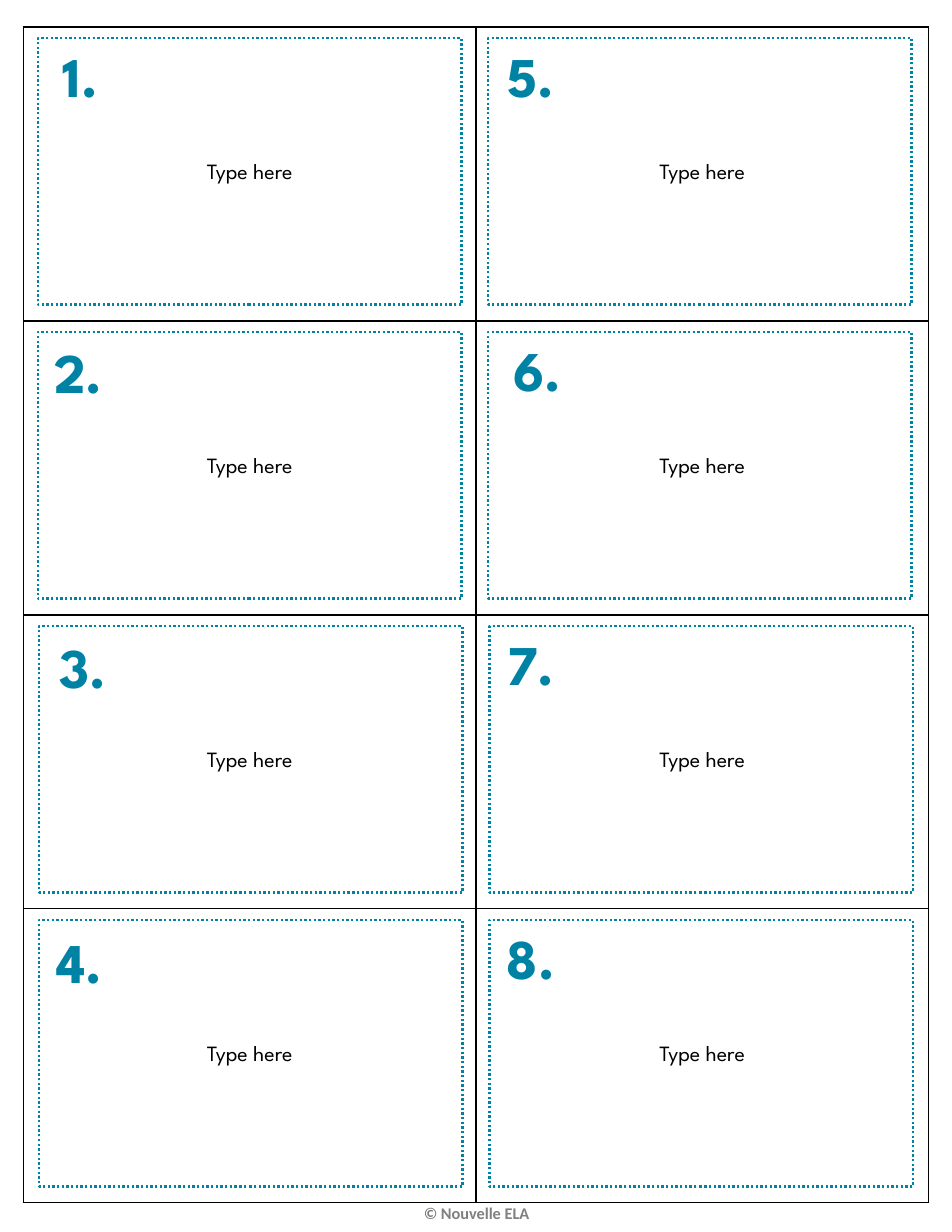
from lxml import etree
from pptx import Presentation
from pptx.dml.color import RGBColor
from pptx.enum.dml import MSO_LINE
from pptx.enum.shapes import MSO_SHAPE
from pptx.enum.text import MSO_ANCHOR, MSO_AUTO_SIZE, PP_ALIGN
from pptx.oxml.ns import qn
from pptx.util import Inches, Pt

RECT = MSO_SHAPE.RECTANGLE
DOTTED = MSO_LINE.ROUND_DOT
CENTER = PP_ALIGN.CENTER
MIDDLE = MSO_ANCHOR.MIDDLE
GROW = MSO_AUTO_SIZE.SHAPE_TO_FIT_TEXT

ROWS, COLS = 4, 2
ROW_H, COL_W = 2.625, 4.04

# Left and top of each number, down the left column and then the right
NUMBERS = [(0.11, 0.32), (0.09, 2.96), (0.13, 5.6), (0.1, 8.23),
           (4.13, 0.32), (4.19, 2.95), (4.13, 5.57), (4.13, 8.2)]


def rgb(value):
    return RGBColor.from_string(value)


def write(tf, text, font="League Spartan", size=14, color="000000", bold=False):
    p = tf.paragraphs[0]
    p.alignment = CENTER
    r = p.add_run()
    r.text = text
    r.font.name = font
    r.font.size = Pt(size)
    r.font.bold = bold
    r.font.color.rgb = rgb(color)


def add_borders(cell, color="000000", width=1):
    tc_pr = cell._tc.get_or_add_tcPr()
    for i, side in enumerate(("lnL", "lnR", "lnT", "lnB")):
        ln = etree.Element(qn(f"a:{side}"), w=str(Pt(width)))
        fill = etree.SubElement(ln, qn("a:solidFill"))
        etree.SubElement(fill, qn("a:srgbClr"), val=color)
        tc_pr.insert(i, ln)


class CardSheet:
    accent = "0082A5"

    def __init__(self, slide):
        self.s = slide

    def text(self, text, x, y, w, h, **fmt):
        tf = self.s.shapes.add_textbox(
            Inches(x), Inches(y), Inches(w), Inches(h)).text_frame
        tf.word_wrap = True
        tf.auto_size = GROW
        write(tf, text, **fmt)

    def grid(self, text, x, y):
        frame = self.s.shapes.add_table(
            ROWS, COLS, Inches(x), Inches(y),
            Inches(COLS * COL_W), Inches(ROWS * ROW_H))
        table = frame.table
        table.first_row = table.horz_banding = False
        for col in table.columns:
            col.width = Inches(COL_W)
        for row in table.rows:
            row.height = Inches(ROW_H)
        for cell in table.iter_cells():
            cell.fill.background()
            add_borders(cell)
            cell.vertical_anchor = MIDDLE
            write(cell.text_frame, text)

    def frame(self, x, y, w, h):
        sp = self.s.shapes.add_shape(
            RECT, Inches(x), Inches(y), Inches(w), Inches(h))
        sp.shadow.inherit = False
        sp.fill.background()
        sp.line.color.rgb = rgb(self.accent)
        sp.line.width = Pt(1.5)
        sp.line.dash_style = DOTTED


def main():
    prs = Presentation()
    prs.slide_width, prs.slide_height = Inches(8.5), Inches(11)
    sheet = CardSheet(prs.slides.add_slide(prs.slide_layouts[6]))

    # Copyright line
    sheet.text("© Nouvelle ELA", 2.97, 10.69, 2.57, 0.29,
               font="Calibri", size=10.5, color="808080", bold=True)

    # Table of cards
    sheet.grid("Type here", 0.21, 0.24)

    # Card numbers
    for n, (x, y) in enumerate(NUMBERS, start=1):
        sheet.text(f"{n}.", x, y, 1.22, 0.71,
                   size=36, color=sheet.accent, bold=True)

    # Dotted frames; the lower two rows sit slightly to the right
    for row in range(ROWS):
        left = 0.34 if row < 2 else 0.35
        for col in range(COLS):
            sheet.frame(left + col * 4.02, 0.34 + row * ROW_H, 3.78, 2.38)

    prs.save("out.pptx")


if __name__ == "__main__":
    main()
